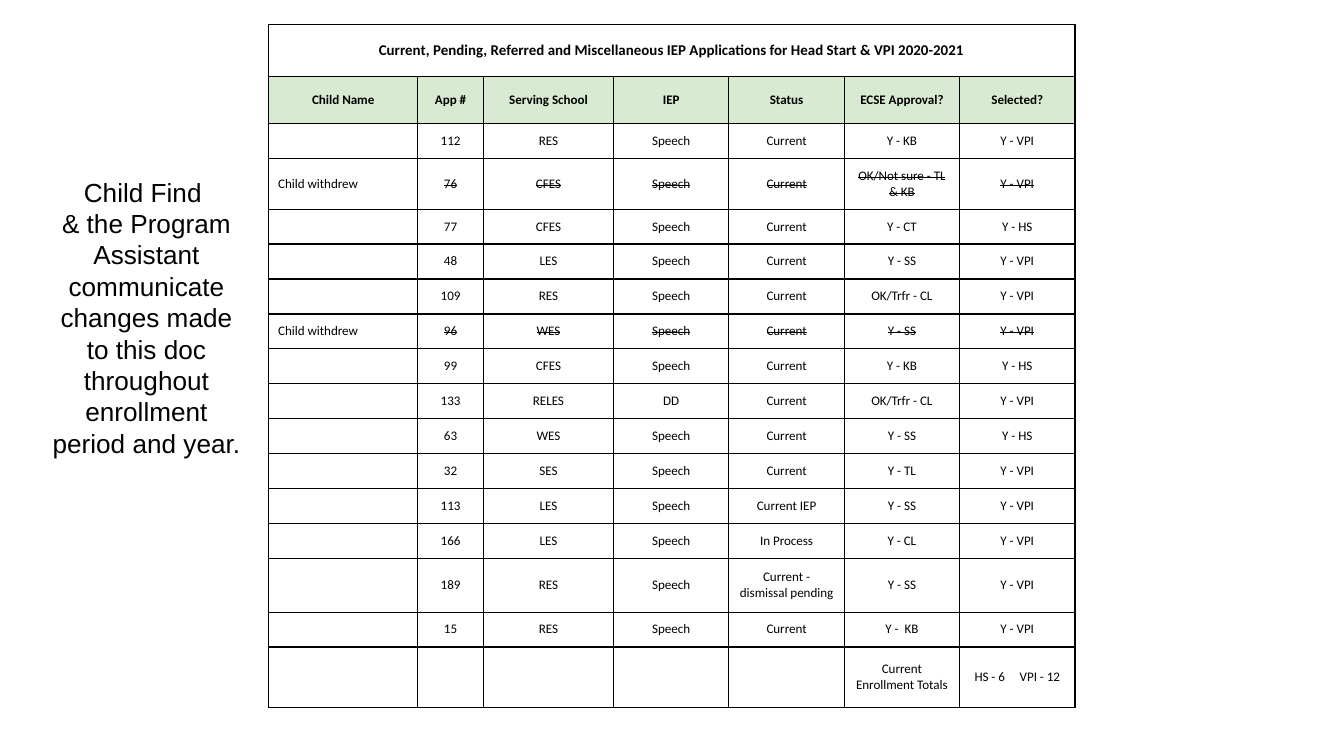
from lxml import etree
from pptx import Presentation
from pptx.dml.color import RGBColor
from pptx.enum.text import MSO_ANCHOR, PP_ALIGN
from pptx.oxml.ns import qn
from pptx.util import Inches, Pt

CENTER = PP_ALIGN.CENTER
LEFT = PP_ALIGN.LEFT
MIDDLE = MSO_ANCHOR.MIDDLE

BLACK, WHITE, GREEN = "000000", "FFFFFF", "D9EAD3"
TITLE = "Current, Pending, Referred and Miscellaneous IEP Applications for Head Start & VPI 2020-2021"
HEADINGS = ["Child Name", "App #", "Serving School", "IEP", "Status", "ECSE Approval?", "Selected?"]
WITHDREW = "Child withdrew"
APPLICATIONS = [
    ["", "112", "RES", "Speech", "Current", "Y - KB", "Y - VPI"],
    [WITHDREW, "76", "CFES", "Speech", "Current", "OK/Not sure - TL & KB", "Y - VPI"],
    ["", "77", "CFES", "Speech", "Current", "Y - CT", "Y - HS"],
    ["", "48", "LES", "Speech", "Current", "Y - SS", "Y - VPI"],
    ["", "109", "RES", "Speech", "Current", "OK/Trfr - CL", "Y - VPI"],
    [WITHDREW, "96", "WES", "Speech", "Current", "Y - SS", "Y - VPI"],
    ["", "99", "CFES", "Speech", "Current", "Y - KB", "Y - HS"],
    ["", "133", "RELES", "DD", "Current", "OK/Trfr - CL", "Y - VPI"],
    ["", "63", "WES", "Speech", "Current", "Y - SS", "Y - HS"],
    ["", "32", "SES", "Speech", "Current", "Y - TL", "Y - VPI"],
    ["", "113", "LES", "Speech", "Current IEP", "Y - SS", "Y - VPI"],
    ["", "166", "LES", "Speech", "In Process", "Y - CL", "Y - VPI"],
    ["", "189", "RES", "Speech", "Current - dismissal pending", "Y - SS", "Y - VPI"],
    ["", "15", "RES", "Speech", "Current", "Y -  KB", "Y - VPI"],
]
TOTALS = ["", "", "", "", "", "Current Enrollment Totals", "HS - 6     VPI - 12"]
COLUMN_WIDTHS = [1.11, 0.49, 0.97] + [0.86] * 4
ROW_HEIGHT = 0.26
SPECIAL_HEIGHTS = {0: 0.39, 1: 0.35, 3: 0.3, 14: 0.4, 16: 0.45}
NOTE = [
    "Child Find ",
    "& the Program Assistant communicate changes made to this doc throughout enrollment period and year.",
]


def color(value):
    """Turn a hex string into a colour."""
    return RGBColor.from_string(value)


def add_span(para, text, font, size, bold=False, struck=False):
    """Add one styled run to a paragraph."""
    span = para.add_run()
    span.text = text
    span.font.name = font
    span.font.size = Pt(size)
    span.font.bold = bold
    span.font.color.rgb = color(BLACK)
    if struck:
        span.font._element.set("strike", "sngStrike")


def add_borders(cell):
    """Draw a thin black line on all four sides of a cell."""
    properties = cell._tc.get_or_add_tcPr()
    for index, side in enumerate(("a:lnL", "a:lnR", "a:lnT", "a:lnB")):
        line = etree.Element(qn(side), w=str(Pt(0.75)))
        fill = etree.SubElement(line, qn("a:solidFill"))
        etree.SubElement(fill, qn("a:srgbClr"), val=BLACK)
        properties.insert(index, line)


def fill_cell(cell, text, fill=WHITE, size=7, bold=False, struck=False, align=CENTER):
    """Style a cell and write its text."""
    cell.fill.solid()
    cell.fill.fore_color.rgb = color(fill)
    add_borders(cell)
    cell.vertical_anchor = MIDDLE
    cell.margin_left = cell.margin_right = Inches(0.07)
    cell.margin_top = cell.margin_bottom = Inches(0.07)
    para = cell.text_frame.paragraphs[0]
    para.alignment = align
    if text:
        add_span(para, text, "Calibri", size, bold, struck)
    else:
        etree.SubElement(para._p, qn("a:endParaRPr"), sz=str(size * 100))


def add_applications_table(page, left, top, width, height):
    """Place the table of applications in the given box."""
    rows = APPLICATIONS + [TOTALS]
    frame = page.shapes.add_table(
        len(rows) + 2, len(HEADINGS), Inches(left), Inches(top), Inches(width), Inches(height)
    )
    table = frame.table
    table.first_row = False
    table.horz_banding = False
    for column, column_width in zip(table.columns, COLUMN_WIDTHS):
        column.width = Inches(width * column_width / sum(COLUMN_WIDTHS))
    for index, row in enumerate(table.rows):
        row.height = Inches(SPECIAL_HEIGHTS.get(index, ROW_HEIGHT))

    table.cell(0, 0).merge(table.cell(0, len(HEADINGS) - 1))
    for column, heading in enumerate(HEADINGS):
        fill_cell(table.cell(0, column), "" if column else TITLE, size=8, bold=True)
        fill_cell(table.cell(1, column), heading, fill=GREEN, bold=True)
    for index, values in enumerate(rows, start=2):
        withdrawn = values[0] == WITHDREW
        for column, value in enumerate(values):
            fill_cell(
                table.cell(index, column),
                value,
                struck=withdrawn and column > 0,
                align=CENTER if column else LEFT,
            )


def add_note(page, left, top, width, height):
    """Place the centred side note in the given box."""
    box = page.shapes.add_textbox(Inches(left), Inches(top), Inches(width), Inches(height))
    frame = box.text_frame
    frame.word_wrap = True
    frame.margin_left = frame.margin_right = Inches(0.1)
    frame.margin_top = frame.margin_bottom = Inches(0.1)
    for index, text in enumerate(NOTE):
        para = frame.add_paragraph() if index else frame.paragraphs[0]
        para.alignment = CENTER
        add_span(para, text, "Arial", 14)


def main():
    """Build the deck and save it."""
    deck = Presentation()
    deck.slide_width = Inches(10)
    deck.slide_height = deck.slide_width * 9 // 16
    page = deck.slides.add_slide(deck.slide_layouts[6])
    add_applications_table(page, 2, 0.18, 6, 5.02)
    add_note(page, 0.25, 1.21, 1.68, 2.63)
    deck.save("out.pptx")


if __name__ == "__main__":
    main()
